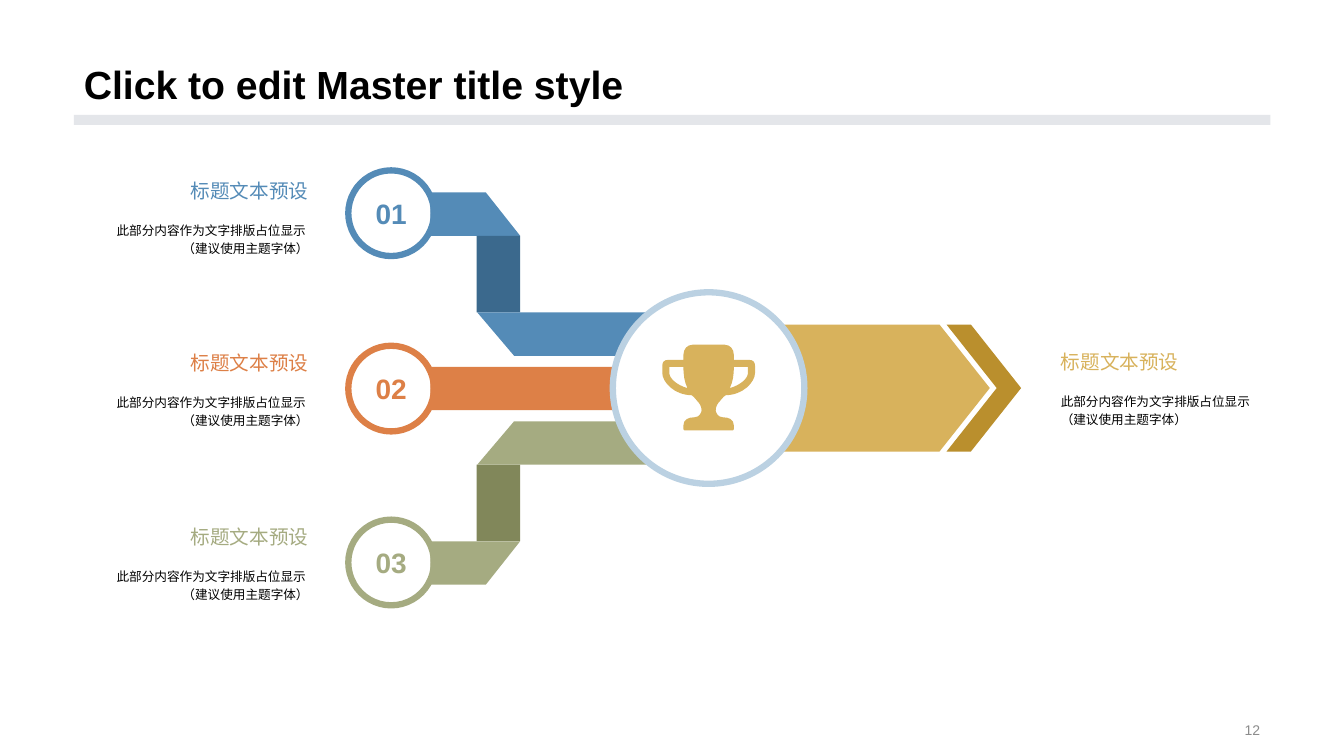
from dataclasses import dataclass
from typing import Optional

from lxml import etree
from pptx import Presentation
from pptx.dml.color import RGBColor
from pptx.enum.shapes import MSO_SHAPE
from pptx.enum.text import MSO_ANCHOR, PP_ALIGN
from pptx.oxml.ns import qn
from pptx.util import Inches, Pt

# Grid: square cells of a tenth of an inch
CELL = 0.1
COLUMNS, ROWS = 133.33, 75
MIDDLE_ROW = 38.55
BAND = 4.3

BLACK = RGBColor(0x00, 0x00, 0x00)
WHITE = RGBColor(0xFF, 0xFF, 0xFF)
RULE_GRAY = RGBColor(0xE4, 0xE6, 0xEA)
NUMBER_GRAY = RGBColor(0x8C, 0x8C, 0x8C)
BLUE = RGBColor(0x54, 0x8B, 0xB7)
DARK_BLUE = RGBColor(0x3B, 0x69, 0x8D)
PALE_BLUE = RGBColor(0xBB, 0xD1, 0xE2)
ORANGE = RGBColor(0xDD, 0x80, 0x47)
GREEN = RGBColor(0xA5, 0xAB, 0x81)
DARK_GREEN = RGBColor(0x81, 0x87, 0x5A)
GOLD = RGBColor(0xD8, 0xB2, 0x5C)
DARK_GOLD = RGBColor(0xBA, 0x8F, 0x2D)

HEADING = "标题文本预设"
BODY = "此部分内容作为文字排版占位显示 \v（建议使用主题字体）"

Point = tuple[float, float]


@dataclass(frozen=True)
class Box:
    column: float
    row: float
    width: float
    height: float


@dataclass(frozen=True)
class TextStyle:
    size: float
    color: RGBColor
    bold: bool = False
    align: PP_ALIGN = PP_ALIGN.LEFT
    anchor: MSO_ANCHOR = MSO_ANCHOR.MIDDLE
    spacing: Optional[float] = None
    wrap: bool = True


@dataclass(frozen=True)
class Step:
    number: str
    color: RGBColor
    circle_row: float
    caption_row: float


@dataclass(frozen=True)
class Arm:
    color: RGBColor
    fold_color: RGBColor
    side: int  # 1 above the middle row, -1 below it


STEPS = [
    Step("01", BLUE, 16.9, 17.2),
    Step("02", ORANGE, 34.3, 34.25),
    Step("03", GREEN, 51.55, 51.55),
]
ARMS = [Arm(BLUE, DARK_BLUE, 1), Arm(GREEN, DARK_GREEN, -1)]

# Right half of the trophy, as offsets from its axis and top: one point
# makes a straight line, three make a curve
TROPHY_AXIS, TROPHY_TOP = 70.3, 34.2
TROPHY_OUTLINE = [
    [(1.6, 0)],
    [(2.1, 0), (2.5, 0.4), (2.5, 1)],
    [(2.5, 1.5)],
    [(4, 1.5)],
    [(4.4, 1.5), (4.6, 1.7), (4.6, 2.1)],
    [(4.6, 2.8)],
    [(4.6, 3.7), (3.4, 5), (1.7, 5)],
    [(1.4, 5.2), (1.2, 5.5), (1.2, 5.5)],
    [(0.9, 5.8), (0.7, 6.1), (0.7, 6.5)],
    [(0.7, 6.7), (0.9, 7.2), (1.4, 7.2)],
    [(2, 7.2), (2.5, 7.4), (2.5, 8)],
    [(2.5, 8.4)],
    [(2.4, 8.5)],
]
HANDLE_HOLE = [
    [(2.5, 3), (2.4, 3.7), (2.1, 4.3)],
    [(3.2, 4), (3.9, 3.3), (3.9, 2.8)],
    [(3.9, 2.2)],
]


def emu(cells: float) -> int:
    return Inches(cells * CELL)


def place(box: Box) -> list[int]:
    return [emu(length) for length in (box.column, box.row, box.width, box.height)]


def paint(shape, fill: Optional[RGBColor], line: Optional[RGBColor] = None) -> None:
    shape.shadow.inherit = False
    if fill is None:
        shape.fill.background()
    else:
        shape.fill.solid()
        shape.fill.fore_color.rgb = fill
    if line is None:
        shape.line.fill.background()
    else:
        shape.line.color.rgb = line
        shape.line.width = Pt(4.5)


def add_preset(slide, kind: MSO_SHAPE, box: Box, fill: Optional[RGBColor],
               line: Optional[RGBColor] = None, adjustment: Optional[float] = None):
    shape = slide.shapes.add_shape(kind, *place(box))
    if adjustment is not None:
        shape.adjustments[0] = adjustment
    paint(shape, fill, line)
    return shape


def add_outline(slide, contours: list[list[Point]], fill: RGBColor):
    scaled = [[(emu(x), emu(y)) for x, y in contour] for contour in contours]
    builder = slide.shapes.build_freeform(*scaled[0][0], scale=1.0)
    for index, contour in enumerate(scaled):
        if index:
            builder.move_to(*contour[0])
        builder.add_line_segments(contour[1:], close=len(contour) < 6)
        if len(contour) >= 6:
            builder.add_line_segments([], close=True)
    shape = builder.convert_to_shape()
    paint(shape, fill)
    return shape


def write(shape, text: str, style: TextStyle) -> None:
    frame = shape.text_frame
    frame.word_wrap = style.wrap
    frame.vertical_anchor = style.anchor
    frame.text = text
    paragraph = frame.paragraphs[0]
    paragraph.alignment = style.align
    if style.spacing:
        paragraph.line_spacing = style.spacing
    font = paragraph.font
    font.name, font.size, font.bold = "Arial", Pt(style.size), style.bold
    font.color.rgb = style.color


def add_text(slide, box: Box, text: str, style: TextStyle):
    shape = slide.shapes.add_textbox(*place(box))
    write(shape, text, style)
    return shape


def add_caption(slide, column: float, row: float, width: float,
                color: RGBColor, align: PP_ALIGN) -> None:
    left_inset = 3.9 if align == PP_ALIGN.LEFT else 0
    parts = [
        (Box(column, row, width, 3.4), HEADING,
         TextStyle(14, color, align=align, wrap=False)),
        (Box(column, row + 3.35, width, 6.1), BODY,
         TextStyle(9, BLACK, align=align, spacing=1.2)),
    ]
    for box, text, style in parts:
        frame = add_text(slide, box, text, style).text_frame
        frame.margin_left, frame.margin_right = emu(left_inset), emu(3.9)
        frame.margin_top = frame.margin_bottom = 0


def add_arm(slide, arm: Arm) -> None:
    def away(distance: float) -> float:
        return MIDDLE_ROW - arm.side * distance

    outer, bend, fold, inner = away(19.45), away(15.15), away(7.55), away(3.25)
    add_outline(slide, [[(51.6, bend), (42.7, bend), (42.7, outer), (48.2, outer)]],
                arm.color)
    add_preset(slide, MSO_SHAPE.RECTANGLE,
               Box(47.3, min(bend, fold), BAND, abs(fold - bend)), arm.fold_color)
    add_outline(slide, [[(47.35, fold), (64.4, fold), (64.4, inner), (51, inner)]],
                arm.color)


def add_trophy(slide) -> None:
    def controls(start: Point, segments: list[list[Point]]) -> list[Point]:
        triples = [part * 3 if len(part) == 1 else part for part in segments]
        return [start] + [point for triple in triples for point in triple]

    def mirror(points: list[Point]) -> list[Point]:
        return [(-x, y) for x, y in reversed(points)]

    half = controls((0, 0), TROPHY_OUTLINE)
    other_half = mirror(half)
    hole = controls((2.5, 2.2), HANDLE_HOLE)
    contours = [half + other_half[:1] * 2 + other_half, hole, mirror(hole)]
    trophy = add_outline(slide, [[(TROPHY_AXIS + x, TROPHY_TOP + y) for x, y in contour]
                                 for contour in contours], GOLD)

    # Turn each run of three control points into one curve
    lines = list(trophy.element.iter(qn("a:lnTo")))
    for first, second, third in zip(lines[::3], lines[1::3], lines[2::3]):
        curve = etree.Element(qn("a:cubicBezTo"))
        first.addprevious(curve)
        for line in (first, second, third):
            curve.append(line[0])
            line.getparent().remove(line)


def main() -> None:
    presentation = Presentation()
    presentation.slide_width, presentation.slide_height = emu(COLUMNS), emu(ROWS)
    slide = presentation.slides.add_slide(presentation.slide_layouts[6])

    # Title, rule and page number
    add_preset(slide, MSO_SHAPE.RECTANGLE, Box(7.33, 11.4, 118.7, 1), RULE_GRAY)
    add_text(slide, Box(7.33, 0, 118.7, 11.2), "Click to edit Master title style",
             TextStyle(28, BLACK, True, anchor=MSO_ANCHOR.BOTTOM, spacing=0.9))
    add_text(slide, Box(94.2, 71.25, 31.8, 2.3), "12",
             TextStyle(10, NUMBER_GRAY, align=PP_ALIGN.RIGHT))

    # Result arrow
    add_preset(slide, MSO_SHAPE.PENTAGON, Box(77.6, 32.2, 20.6, 12.6), GOLD,
               adjustment=0.396)
    add_preset(slide, MSO_SHAPE.CHEVRON, Box(93.9, 32.2, 7.4, 12.6), DARK_GOLD,
               adjustment=0.673)

    # Bands leading to the hub
    for arm in ARMS:
        add_arm(slide, arm)
    add_preset(slide, MSO_SHAPE.RECTANGLE, Box(42.7, 36.4, 21.7, BAND), ORANGE)

    # Numbered steps with captions
    for step in STEPS:
        circle = add_preset(slide, MSO_SHAPE.OVAL, Box(34.55, step.circle_row, 8.5, 8.5),
                            None, step.color)
        write(circle, step.number,
              TextStyle(20, step.color, True, PP_ALIGN.CENTER, wrap=False))
        add_caption(slide, 6, step.caption_row, 28.5, step.color, PP_ALIGN.RIGHT)

    # Hub, trophy and result caption
    add_preset(slide, MSO_SHAPE.OVAL, Box(60.8, 29, 19, 19), WHITE, PALE_BLUE)
    add_trophy(slide)
    add_caption(slide, 101.33, 34.2, 27.5, GOLD, PP_ALIGN.LEFT)

    presentation.save("out.pptx")


if __name__ == "__main__":
    main()
